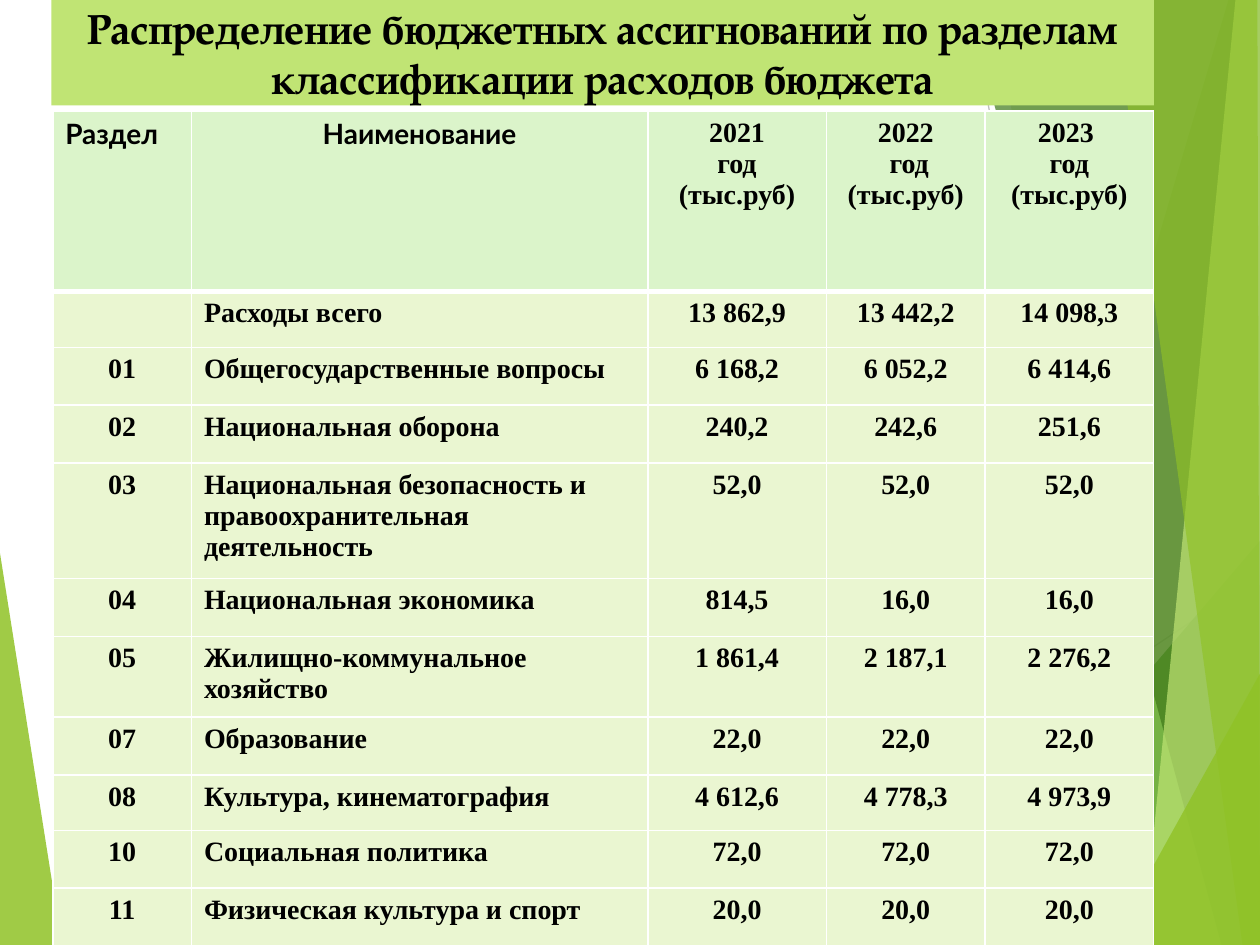
from lxml import etree
from pptx import Presentation
from pptx.dml.color import RGBColor
from pptx.enum.shapes import MSO_CONNECTOR
from pptx.enum.text import MSO_ANCHOR, MSO_AUTO_SIZE, PP_ALIGN
from pptx.oxml.ns import qn
from pptx.util import Pt

LEFT, CENTER = PP_ALIGN.LEFT, PP_ALIGN.CENTER
MIDDLE = MSO_ANCHOR.MIDDLE
NO_AUTOFIT = MSO_AUTO_SIZE.NONE
STRAIGHT = MSO_CONNECTOR.STRAIGHT

COLORS = {
    "text": "000000", "border": "FFFFFF", "title": "C0E474",
    "header": "DBF4CA", "body": "EAF6D1",
    "green": "90C226", "leaf": "54A021", "forest": "3F7819", "lime": "C0E474",
    "light_gray": "D9D9D9", "gray": "BFBFBF",
}
WIDTH, HEIGHT = 720, 540


def add_bold_run(paragraph, text, font_name, size):
    run = paragraph.add_run()
    run.text = text
    run.font.name = font_name
    run.font.size = Pt(size)
    run.font.bold = True
    run.font.color.rgb = RGBColor.from_string(COLORS["text"])


def set_borders(cell, top, bottom):
    """Draw the four cell edges; top and bottom widths are in points."""
    properties = cell._tc.get_or_add_tcPr()
    edges = (("a:lnL", 1), ("a:lnR", 1), ("a:lnT", top), ("a:lnB", bottom))
    for position, (tag, width) in enumerate(edges):
        edge = etree.Element(qn(tag), w=str(Pt(width)))
        fill = etree.SubElement(edge, qn("a:solidFill"))
        etree.SubElement(fill, qn("a:srgbClr"), val=COLORS["border"])
        properties.insert(position, edge)


prs = Presentation()
prs.slide_width, prs.slide_height = Pt(WIDTH), Pt(HEIGHT)
slide = prs.slides.add_slide(prs.slide_layouts[5])
shapes = slide.shapes

# Decorative lines and translucent facets
for start, end, color in (
    ((404, HEIGHT), (WIDTH, 329), "light_gray"),
    ((554, 0), (651, HEIGHT), "gray"),
):
    ray = shapes.add_connector(STRAIGHT, *map(Pt, start + end))
    ray.line.color.rgb = RGBColor.from_string(COLORS[color])
    ray.line.width = Pt(0.75)
    etree.SubElement(ray._element.spPr, qn("a:effectLst"))

bottom_right, top_right = (WIDTH, HEIGHT), (WIDTH, 0)
facets = [
    ("green", 85, [(0, 316), (35.5, HEIGHT), (0, HEIGHT)]),
    ("green", 30, [(702, 0), (543, HEIGHT), bottom_right, top_right]),
    ("green", 20, [(567, 0), (662, HEIGHT), bottom_right, top_right]),
    ("leaf", 72, [(523, HEIGHT), (WIDTH, 309), bottom_right]),
    ("forest", 70, [(552, 0), (698, HEIGHT), bottom_right, top_right]),
    ("lime", 70, [(706, 0), (653, HEIGHT), bottom_right, top_right]),
    ("green", 65, [(636, 0), (710, HEIGHT), bottom_right, (718.5, 0)]),
    ("green", 80, [(634, HEIGHT), (WIDTH, 385), bottom_right]),
]
for color, opacity, corners in facets:
    points = [(Pt(x), Pt(y)) for x, y in corners]
    builder = shapes.build_freeform(*points[0])
    builder.add_line_segments(points[1:], close=True)
    facet = builder.convert_to_shape()
    facet.shadow.inherit = False
    facet.line.fill.background()
    facet.fill.solid()
    facet.fill.fore_color.rgb = RGBColor.from_string(COLORS[color])
    tint = facet._element.spPr.find(qn("a:solidFill"))[0]
    etree.SubElement(tint, qn("a:alpha"), val=str(opacity * 1000))

# Budget table
YEAR_UNIT = "(тыс.руб)"
budget = [
    ("Раздел", "Наименование", f"2021\nгод\n{YEAR_UNIT}",
     f"2022\n год\n{YEAR_UNIT}", f"2023 \nгод\n{YEAR_UNIT}"),
    ("", "Расходы всего", "13 862,9", "13 442,2", "14 098,3"),
    ("01", "Общегосударственные вопросы", "6 168,2", "6 052,2", "6 414,6"),
    ("02", "Национальная оборона", "240,2", "242,6", "251,6"),
    ("03", "Национальная безопасность и правоохранительная деятельность",
     "52,0", "52,0", "52,0"),
    ("04", "Национальная экономика", "814,5", "16,0", "16,0"),
    ("05", "Жилищно-коммунальное хозяйство", "1 861,4", "2 187,1", "2 276,2"),
    ("07", "Образование", "22,0", "22,0", "22,0"),
    ("08", "Культура, кинематография", "4 612,6", "4 778,3", "4 973,9"),
    ("10", "Социальная политика", "72,0", "72,0", "72,0"),
    ("11", "Физическая культура и спорт", "20,0", "20,0", "20,0"),
]
column_widths = [79.2, 260.8, 102, 90.8, 96.2]
row_heights = [103.2, 32, 33, 33, 66.2, 33, 46.2, 33, 31.7, 33, 33]
table = shapes.add_table(
    len(budget), len(column_widths), Pt(30.2), Pt(63.3),
    Pt(sum(column_widths)), Pt(sum(row_heights)),
).table
table.horz_banding = False
for column, width in zip(table.columns, column_widths):
    column.width = Pt(width)
for row, height in zip(table.rows, row_heights):
    row.height = Pt(height)

for r, entries in enumerate(budget):
    for c, entry in enumerate(entries):
        cell = table.cell(r, c)
        cell.fill.solid()
        cell.fill.fore_color.rgb = RGBColor.from_string(
            COLORS["body" if r else "header"])
        set_borders(cell, top=3 if r == 1 else 1, bottom=1 if r else 3)
        font_name = "Lato" if r == 0 and c < 2 else "Times New Roman"
        left_aligned = c == 0 if r == 0 else c == 1
        for i, line in enumerate(entry.split("\n")):
            frame = cell.text_frame
            paragraph = frame.add_paragraph() if i else frame.paragraphs[0]
            paragraph.alignment = LEFT if left_aligned else CENTER
            if line:
                add_bold_run(paragraph, line, font_name, 16)

# Title band, brought in front of the facets
title = shapes.title
shapes._spTree.append(title._element)
title.left, title.top = Pt(29.4), Pt(0)
title.width, title.height = Pt(630), Pt(60.3)
title.fill.solid()
title.fill.fore_color.rgb = RGBColor.from_string(COLORS["title"])
heading = title.text_frame
heading.word_wrap = True
heading.auto_size = NO_AUTOFIT
heading.vertical_anchor = MIDDLE
heading.paragraphs[0].alignment = CENTER
add_bold_run(
    heading.paragraphs[0],
    "Распределение бюджетных ассигнований по разделам классификации расходов бюджета",
    "TeX Gyre Pagella", 24)

prs.save("out.pptx")
